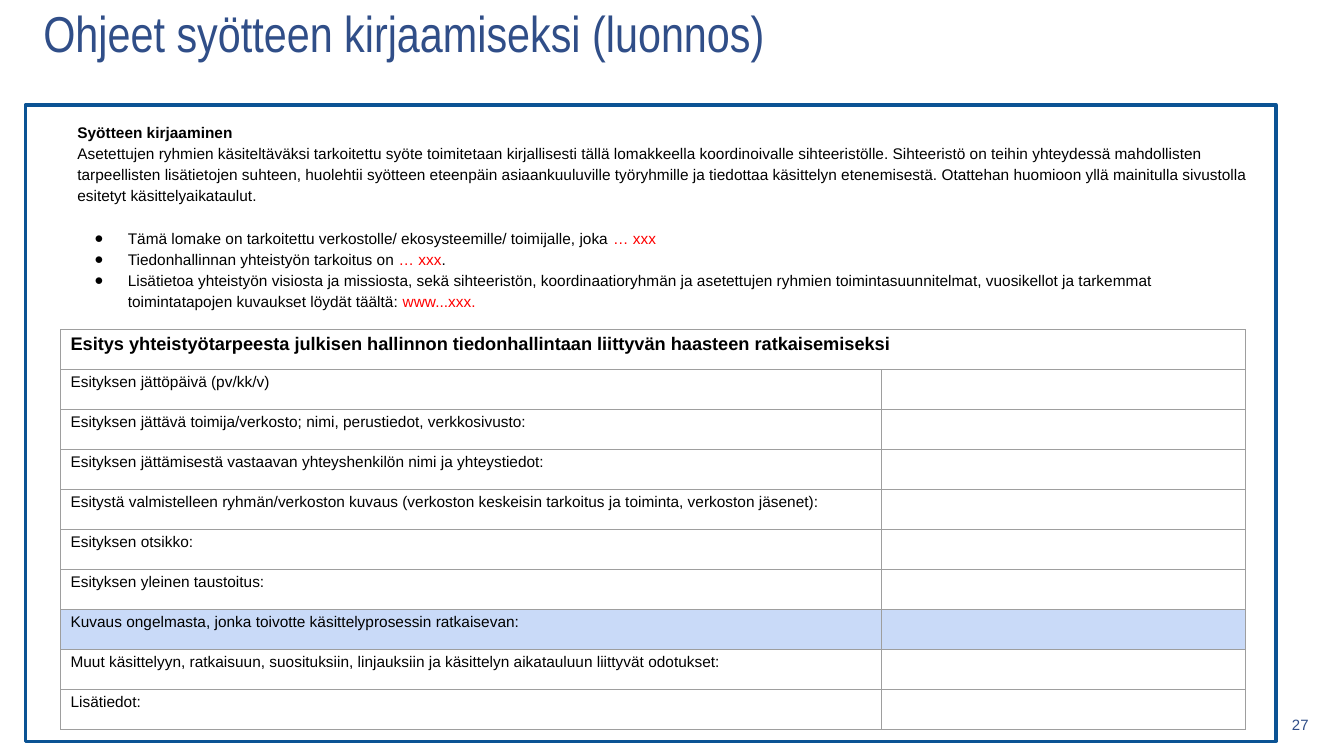
from lxml.etree import SubElement
from pptx import Presentation
from pptx.dml.color import RGBColor
from pptx.enum.shapes import MSO_SHAPE
from pptx.enum.text import MSO_ANCHOR, PP_ALIGN
from pptx.oxml.ns import qn
from pptx.util import Pt

# Content
TITLE = "Ohjeet syötteen kirjaamiseksi (luonnos)"
PAGE_NUMBER = "27"
INTRO_HEADING = "Syötteen kirjaaminen"
INTRO = (
    "Asetettujen ryhmien käsiteltäväksi tarkoitettu syöte toimitetaan kirjallisesti tällä "
    "lomakkeella koordinoivalle sihteeristölle. Sihteeristö on teihin yhteydessä mahdollisten "
    "tarpeellisten lisätietojen suhteen, huolehtii syötteen eteenpäin asiaankuuluville "
    "työryhmille ja tiedottaa käsittelyn etenemisestä. Otattehan huomioon yllä mainitulla "
    "sivustolla esitetyt käsittelyaikataulut."
)
# Each bullet: black text, red placeholder, black ending
BULLETS = [
    ("Tämä lomake on tarkoitettu verkostolle/ ekosysteemille/ toimijalle, joka ", "… xxx", ""),
    ("Tiedonhallinnan yhteistyön tarkoitus on", " … xxx", "."),
    ("Lisätietoa yhteistyön visiosta ja missiosta, sekä sihteeristön, koordinaatioryhmän ja "
     "asetettujen ryhmien toimintasuunnitelmat, vuosikellot ja tarkemmat toimintatapojen "
     "kuvaukset löydät täältä: ", "www...xxx.", ""),
]
FORM_TITLE = "Esitys yhteistyötarpeesta julkisen hallinnon tiedonhallintaan liittyvän haasteen ratkaisemiseksi"
FORM_FIELDS = [
    "Esityksen jättöpäivä (pv/kk/v)",
    "Esityksen jättävä toimija/verkosto; nimi, perustiedot, verkkosivusto:",
    "Esityksen jättämisestä vastaavan yhteyshenkilön nimi ja yhteystiedot:",
    "Esitystä valmistelleen ryhmän/verkoston kuvaus (verkoston keskeisin tarkoitus ja toiminta, "
    "verkoston jäsenet):",
    "Esityksen otsikko:",
    "Esityksen yleinen taustoitus:",
    "Kuvaus ongelmasta, jonka toivotte käsittelyprosessin ratkaisevan:",
    "Muut käsittelyyn, ratkaisuun, suosituksiin, linjauksiin ja käsittelyn aikatauluun liittyvät odotukset:",
    "Lisätiedot:",
]
HIGHLIGHTED_ROW = 7

# Style and layout, in points
BLACK, RED, NAVY, BLUE = "000000", "FF0000", "304E88", "0B5394"
GREY, LIGHT_BLUE = "9E9E9E", "C9DAF8"
BODY_SIZE = 11
LINE_SPACING = 1.15
COLUMN_WIDTHS = (586.8, 259.9)
ROW_HEIGHT = 28.58


def color(hex_text):
    return RGBColor.from_string(hex_text)


def style(run, size=BODY_SIZE, hex_text=BLACK, bold=False, name="Arial"):
    run.font.size = Pt(size)
    run.font.name = name
    run.font.bold = bold
    run.font.color.rgb = color(hex_text)


def add_text_box(slide, left, top, width, height, vertical_margin=3.6):
    box = slide.shapes.add_textbox(Pt(left), Pt(top), Pt(width), Pt(height))
    frame = box.text_frame
    frame.word_wrap = True
    frame.margin_left = frame.margin_right = Pt(7.2)
    frame.margin_top = frame.margin_bottom = Pt(vertical_margin)
    return frame


def add_bullet(paragraph):
    properties = paragraph._p.get_or_add_pPr()
    properties.set("marL", str(Pt(36)))
    properties.set("indent", str(-Pt(23.8)))
    bullet_color = SubElement(properties, qn("a:buClr"))
    SubElement(bullet_color, qn("a:srgbClr"), val=BLACK)
    SubElement(properties, qn("a:buFont"), typeface="Arial")
    SubElement(properties, qn("a:buChar"), char="●")


def format_cell(cell, hex_text=None):
    cell.margin_left = cell.margin_right = Pt(7.2)
    cell.margin_top = cell.margin_bottom = Pt(2.9)
    properties = cell._tc.get_or_add_tcPr()
    for side in ("lnL", "lnR", "lnT", "lnB"):
        border = SubElement(properties, qn("a:" + side), w=str(Pt(0.75)))
        fill = SubElement(border, qn("a:solidFill"))
        SubElement(fill, qn("a:srgbClr"), val=GREY)
    if hex_text:
        cell.fill.solid()
        cell.fill.fore_color.rgb = color(hex_text)
    else:
        cell.fill.background()


presentation = Presentation()
presentation.slide_width = Pt(960)
presentation.slide_height = Pt(540)
slide = presentation.slides.add_slide(presentation.slide_layouts[6])

# Frame around the form
outline = slide.shapes.add_shape(MSO_SHAPE.RECTANGLE, Pt(18), Pt(75), Pt(893.5), Pt(454.5))
outline.shadow.inherit = False
outline.fill.background()
outline.line.color.rgb = color(BLUE)
outline.line.width = Pt(2.25)
SubElement(outline.line._get_or_add_ln(), qn("a:round"))

# Page number
number_frame = add_text_box(slide, 891.4, 506.2, 50.4, 23)
number_frame.vertical_anchor = MSO_ANCHOR.MIDDLE
number_frame.text = PAGE_NUMBER
number_frame.paragraphs[0].alignment = PP_ALIGN.RIGHT
style(number_frame.paragraphs[0].runs[0], 10.7, NAVY)

# Title
title_frame = add_text_box(slide, 23.8, -12.2, 827.3, 87.1, vertical_margin=7.2)
title_frame.text = TITLE
title_frame.paragraphs[0].line_spacing = LINE_SPACING
style(title_frame.paragraphs[0].runs[0], 36, NAVY, name="Arial Narrow")

# Form table
table = slide.shapes.add_table(
    len(FORM_FIELDS) + 1, 2, Pt(43.2), Pt(235.5),
    Pt(sum(COLUMN_WIDTHS)), Pt(ROW_HEIGHT * (len(FORM_FIELDS) + 1)),
).table
table.first_row = False
table.horz_banding = False
for column, width in zip(table.columns, COLUMN_WIDTHS):
    column.width = Pt(width)
for index, label in enumerate([FORM_TITLE] + FORM_FIELDS):
    table.rows[index].height = Pt(ROW_HEIGHT)
    for cell in table.rows[index].cells:
        format_cell(cell, LIGHT_BLUE if index == HIGHLIGHTED_ROW else None)
    label_cell = table.cell(index, 0)
    label_cell.text_frame.text = label
    is_header = index == 0
    style(label_cell.text_frame.paragraphs[0].runs[0], 13 if is_header else BODY_SIZE, bold=is_header)
table.cell(0, 0).merge(table.cell(0, 1))

# Instructions
instructions = add_text_box(slide, 48.2, 82.1, 857.5, 145.4)
instructions.text = INTRO_HEADING
style(instructions.paragraphs[0].runs[0], bold=True)
intro_paragraph = instructions.add_paragraph()
intro_paragraph.text = INTRO
style(intro_paragraph.runs[0])
for index, parts in enumerate(BULLETS):
    paragraph = instructions.add_paragraph()
    add_bullet(paragraph)
    if index == 0:
        paragraph.space_before = Pt(15.1)
    for text, hex_text in zip(parts, (BLACK, RED, BLACK)):
        if text:
            run = paragraph.add_run()
            run.text = text
            style(run, hex_text=hex_text)
for paragraph in instructions.paragraphs:
    paragraph.line_spacing = LINE_SPACING

presentation.save("out.pptx")
